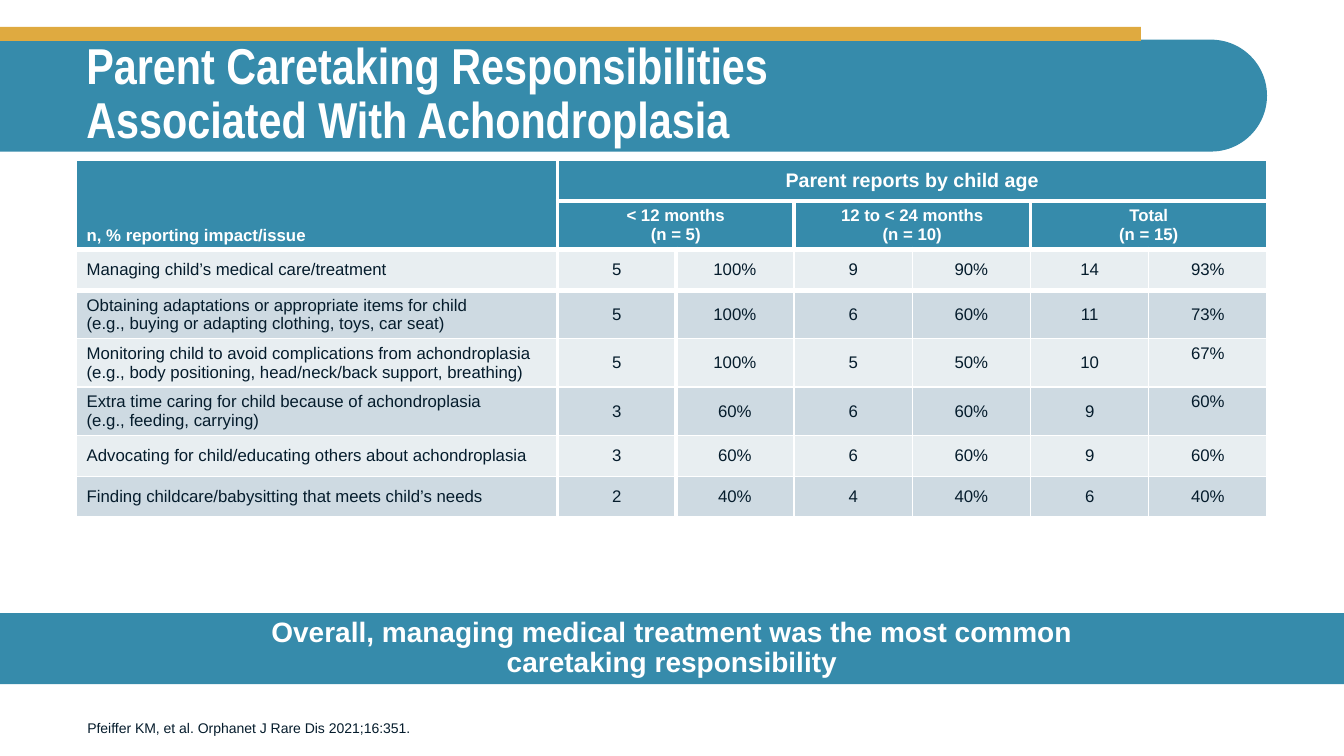
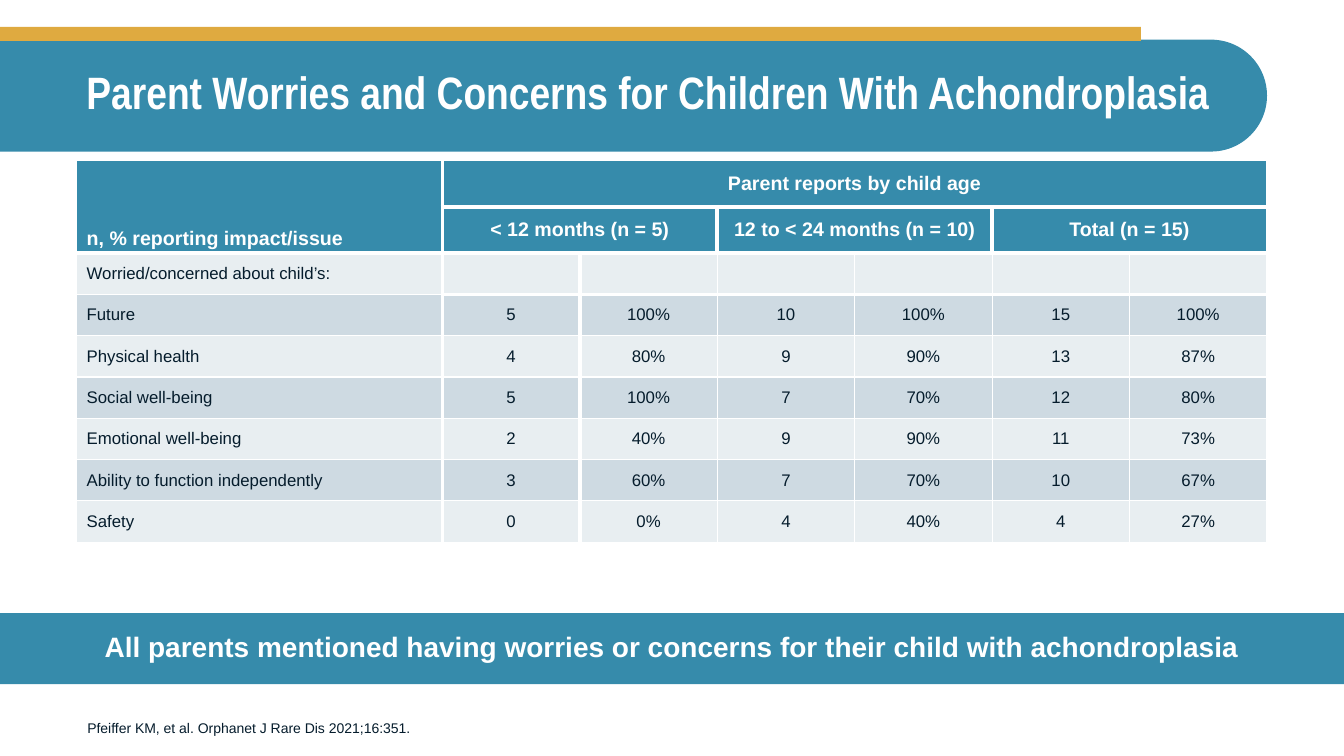
from lxml import etree
from pptx import Presentation
from pptx import util as u
from pptx.dml import color
from pptx.enum import shapes, text
from pptx.oxml import ns

TEAL, GOLD, INK, WHITE = "368BAB", "DFAA40", "051C2C", "FFFFFF"
BANDS = "E8EEF1", "CEDAE2"
WIDE, HIGH = 33.87, 19.05
LEFT, SPAN = 1.93, 30
MID, LOW = text.MSO_ANCHOR.MIDDLE, text.MSO_ANCHOR.BOTTOM
TOP = text.MSO_ANCHOR.TOP
MIDDLE = text.PP_ALIGN.CENTER
START = text.PP_ALIGN.LEFT

TITLE = {"size": u.Pt(36), "name": "Arial Narrow", "bold": True}
CALL = {"size": u.Pt(20), "name": "Arial", "bold": True}
NOTE = {"size": u.Pt(10), "name": "Arial", "bold": False}
BODY = {"size": u.Pt(12), "name": "Arial", "bold": False}
SOURCE = "Pfeiffer KM, et al. Orphanet J Rare Dis 2021;16:351."
LABEL = "n, % reporting impact/issue"
GROUP = "Parent reports by child age"

CARE = {
    "title": "Parent Caretaking Responsibilities\vAssociated With Achondroplasia",
    "size": 36,
    "first": 12.12,
    "heights": [1.03, 1.2, 1.03, 1.2, 1.2, 1.2, 1.03, 1.03],
    "sizes": [12, 14, 12],
    "rule": 4.5,
    "inner": 4.5,
    "raised": [(4, 6), (5, 6)],
    "ages": ["< 12 months\n(n = 5)", "12 to < 24 months\n(n = 10)", "Total\n(n = 15)"],
    "rows": [
        ["Managing child’s medical care/treatment",
         "5", "100%", "9", "90%", "14", "93%"],
        ["Obtaining adaptations or appropriate items for child\n"
         "(e.g., buying or adapting clothing, toys, car seat)",
         "5", "100%", "6", "60%", "11", "73%"],
        ["Monitoring child to avoid complications from achondroplasia\n"
         "(e.g., body positioning, head/neck/back support, breathing)",
         "5", "100%", "5", "50%", "10", "67%"],
        ["Extra time caring for child because of achondroplasia\n"
         "(e.g., feeding, carrying)",
         "3", "60%", "6", "60%", "9", "60%"],
        ["Advocating for child/educating others about achondroplasia",
         "3", "60%", "6", "60%", "9", "60%"],
        ["Finding childcare/babysitting that meets child’s needs",
         "2", "40%", "4", "40%", "6", "40%"],
    ],
    "call": "Overall, managing medical treatment was the most common\v"
            "caretaking responsibility",
}

WORRY = {
    "title": "Parent Worries and Concerns for Children With Achondroplasia",
    "size": 32.4,
    "first": 9.22,
    "heights": [1.17] * 2 + [1.04] * 7,
    "sizes": [14, 14, 14],
    "rule": 3,
    "inner": 1,
    "raised": [],
    "ages": ["< 12 months (n = 5)", "12 to < 24 months (n = 10)", "Total (n = 15)"],
    "rows": [
        ["Worried/concerned about child’s:"] + [""] * 6,
        ["Future", "5", "100%", "10", "100%", "15", "100%"],
        ["Physical health", "4", "80%", "9", "90%", "13", "87%"],
        ["Social well-being", "5", "100%", "7", "70%", "12", "80%"],
        ["Emotional well-being", "2", "40%", "9", "90%", "11", "73%"],
        ["Ability to function independently", "3", "60%", "7", "70%", "10", "67%"],
        ["Safety", "0", "0%", "4", "40%", "4", "27%"],
    ],
    "call": "All parents mentioned having worries or concerns for their child "
            "with achondroplasia",
}


def rgb(code):
    return color.RGBColor.from_string(code)


def apply(item, style):
    for key, value in style.items():
        setattr(item, key, value)


def write(frame, words, style, tone, para):
    frame.text = words
    for line in frame.paragraphs:
        apply(line, para)
        for run in line.runs:
            apply(run.font, style)
            run.font.color.rgb = rgb(tone)


def block(slide, kind, at, fill):
    shape = slide.shapes.add_shape(kind, *map(u.Cm, at))
    shape.shadow.inherit = False
    shape.fill.solid()
    shape.fill.fore_color.rgb = rgb(fill)
    shape.line.fill.background()
    return shape


def label(slide, at, words, style, tone, anchor, para):
    frame = slide.shapes.add_textbox(*map(u.Cm, at)).text_frame
    apply(frame, {"word_wrap": True, "vertical_anchor": anchor})
    write(frame, words, style, tone, para)


def header(slide, words, size):
    long, tall, y = 31.93, 2.82, 1
    band = block(slide, shapes.MSO_SHAPE.ROUND_2_SAME_RECTANGLE,
                 ((long - tall) / 2, y + (tall - long) / 2, tall, long), TEAL)
    band.adjustments[0] = 0.5
    band.rotation = 90
    block(slide, shapes.MSO_SHAPE.RECTANGLE, (0, 0.68, 28.75, 0.35), GOLD)
    label(slide, (LEFT, 1, SPAN, 2.8), words, {**TITLE, "size": u.Pt(size)},
          WHITE, MID, {"line_spacing": 0.9})


def footer(slide, words):
    label(slide, (1.95, 17.04, 25.1, 1.63), SOURCE, NOTE, INK, LOW, {})
    bar = block(slide, shapes.MSO_SHAPE.RECTANGLE, (0, 15.45, WIDE, 1.79), TEAL)
    frame = bar.text_frame
    apply(frame, {"word_wrap": True, "vertical_anchor": MID,
                  "margin_left": u.Cm(2), "margin_right": u.Cm(2)})
    write(frame, words, CALL, WHITE, {"alignment": MIDDLE, "line_spacing": 0.9})


def border(cell, sides):
    props = cell._tc.get_or_add_tcPr()
    for spot, (side, width) in enumerate(sides.items()):
        line = etree.Element(ns.qn("a:ln" + side), w=str(u.Pt(width)))
        solid = etree.SubElement(line, ns.qn("a:solidFill"))
        etree.SubElement(solid, ns.qn("a:srgbClr"), val=WHITE)
        props.insert(spot, line)


def across(edge, row):
    if edge in (0, 7):
        return 1
    return 3 if row < 2 or edge < 3 else 1


def down(edge, col, data):
    if edge == 1:
        return 3
    if edge == 2:
        return data["rule"]
    if edge == 3:
        return data["rule"] if col else data["inner"]
    return 1


def fill(cell, words, spot, style, tone, back, data, anchor=MID):
    row, col = spot
    cell.fill.solid()
    cell.fill.fore_color.rgb = rgb(back)
    apply(cell, {"vertical_anchor": anchor, "margin_bottom": u.Cm(0.1),
                 "margin_top": u.Cm(0.14 if anchor == TOP else 0.1)})
    write(cell.text_frame, words, style, tone,
          {"alignment": MIDDLE if col else START})
    right, base = col + cell.span_width, row + cell.span_height
    border(cell, {"L": across(col, row), "R": across(right, row),
                  "T": down(row, col, data), "B": down(base, col, data)})


def grid(slide, data):
    tall = data["heights"]
    size = len(tall), 7
    at = LEFT, 4.04, SPAN, sum(tall)
    table = slide.shapes.add_table(*size, *map(u.Cm, at)).table
    apply(table, {"first_row": False, "horz_banding": False})
    first = data["first"]
    for col, width in zip(table.columns, [first] + [(SPAN - first) / 6] * 6):
        col.width = u.Cm(width)
    for row, height in zip(table.rows, tall):
        row.height = u.Cm(height)

    heads = [(0, 0, 1, 0, LABEL), (0, 1, 0, 6, GROUP)]
    heads += [(1, 1 + 2 * n, 1, 2 + 2 * n, age) for n, age in enumerate(data["ages"])]
    points = data["sizes"] + data["sizes"][-1:] * 2
    for (row, col, last, end, words), size in zip(heads, points):
        cell = table.cell(row, col)
        cell.merge(table.cell(last, end))
        fill(cell, words, (row, col), {**BODY, "size": u.Pt(size), "bold": True},
             WHITE, TEAL, data, MID if col else LOW)

    for row, values in enumerate(data["rows"], 2):
        for col, words in enumerate(values):
            anchor = TOP if (row, col) in data["raised"] else MID
            fill(table.cell(row, col), words, (row, col), BODY, INK,
                 BANDS[row % 2], data, anchor)


def main():
    deck = Presentation()
    apply(deck, {"slide_width": u.Cm(WIDE), "slide_height": u.Cm(HIGH)})
    for data in (CARE, WORRY):
        slide = deck.slides.add_slide(deck.slide_layouts[6])
        header(slide, data["title"], data["size"])
        grid(slide, data)
        footer(slide, data["call"])
    deck.save("out.pptx")


if __name__ == "__main__":
    main()
